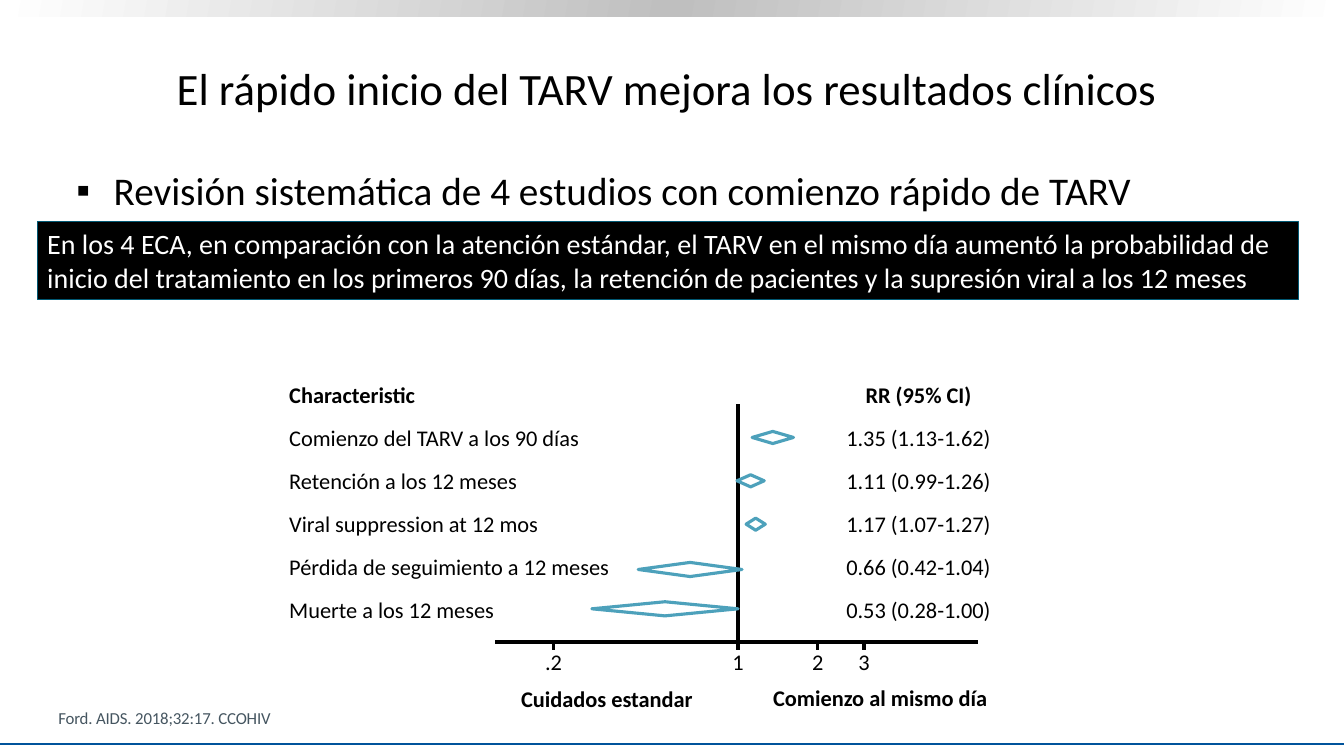
from dataclasses import dataclass
from math import log

from lxml import etree
from pptx import Presentation
from pptx.dml.color import RGBColor
from pptx.enum.shapes import MSO_CONNECTOR, MSO_SHAPE
from pptx.enum.text import MSO_ANCHOR, PP_ALIGN
from pptx.oxml.ns import qn
from pptx.util import Emu, Pt

LEFT, CENTER = PP_ALIGN.LEFT, PP_ALIGN.CENTER
TOP, MIDDLE, BOTTOM = MSO_ANCHOR.TOP, MSO_ANCHOR.MIDDLE, MSO_ANCHOR.BOTTOM
RECTANGLE, DIAMOND = MSO_SHAPE.RECTANGLE, MSO_SHAPE.DIAMOND
STRAIGHT = MSO_CONNECTOR.STRAIGHT

EMU_PER_PX = 9144  # 100 px to the inch
FONT = "Calibri"
COLORS = {
    "black": "000000", "white": "FFFFFF", "silver": "BFBFBF", "footer": "00539B",
    "diamond": "4DA1BB", "banner_line": "015873", "source": "455560",
}

AXIS_Y = 637
NO_EFFECT_X = 732
PX_PER_LOG_UNIT = 114
TICK_LABEL_WIDTH = 60
ROW_GAP = 15.4


@dataclass
class Box:
    left: int
    top: int
    width: int
    height: int


@dataclass
class Line:
    text: str
    size: int = 16
    color: str = "black"
    bold: bool = False


@dataclass
class Outcome:
    label: str
    ratio: float
    low: float
    high: float
    middle: int
    height: int

    @property
    def result(self) -> str:
        return f"{self.ratio:.2f} ({self.low:.2f}-{self.high:.2f})"


@dataclass
class Tick:
    value: float
    label: str


OUTCOMES = [
    Outcome("Comienzo del TARV a los 90 días", 1.35, 1.13, 1.62, 434, 12),
    Outcome("Retención a los 12 meses", 1.11, 0.99, 1.26, 477, 12),
    Outcome("Viral suppression at 12 mos", 1.17, 1.07, 1.27, 520, 12),
    Outcome("Pérdida de seguimiento a 12 meses", 0.66, 0.42, 1.04, 565, 14),
    Outcome("Muerte a los 12 meses", 0.53, 0.28, 1.00, 604, 14),
]
TICKS = [Tick(0.2, ".2"), Tick(1, "1"), Tick(2, "2"), Tick(3, "3")]


def px(value: int) -> Emu:
    return Emu(value * EMU_PER_PX)


def rgb(name: str) -> RGBColor:
    return RGBColor.from_string(COLORS[name])


def ratio_x(ratio: float) -> int:
    """Horizontal place of a risk ratio on the logarithmic axis."""
    return round(NO_EFFECT_X + PX_PER_LOG_UNIT * log(ratio))


def write(shape, lines: list[Line], align=LEFT, anchor=TOP, wrap: bool = True,
          spacing: float = 1.0, gap: float = 0):
    frame = shape.text_frame
    frame.word_wrap = wrap
    frame.vertical_anchor = anchor
    for index, line in enumerate(lines):
        paragraph = frame.add_paragraph() if index else frame.paragraphs[0]
        paragraph.alignment = align
        paragraph.line_spacing = spacing
        if index:
            paragraph.space_before = Pt(gap)
        run = paragraph.add_run()
        run.text = line.text
        run.font.name = FONT
        run.font.size = Pt(line.size)
        run.font.bold = line.bold
        run.font.color.rgb = rgb(line.color)
    return shape


def add_text(slide, box: Box, lines: list[Line], **layout):
    shape = slide.shapes.add_textbox(px(box.left), px(box.top), px(box.width), px(box.height))
    return write(shape, lines, **layout)


def add_box(slide, kind, box: Box, fill: str | None = None, line: str | None = None,
            width: float = 0.75):
    shape = slide.shapes.add_shape(kind, px(box.left), px(box.top), px(box.width), px(box.height))
    shape.shadow.inherit = False
    if fill:
        shape.fill.solid()
        shape.fill.fore_color.rgb = rgb(fill)
    else:
        shape.fill.background()
    if line:
        shape.line.color.rgb = rgb(line)
        shape.line.width = Pt(width)
    else:
        shape.line.fill.background()
    return shape


def add_line(slide, x1: int, y1: int, x2: int, y2: int, color: str = "black",
             width: float = 2.25) -> None:
    connector = slide.shapes.add_connector(STRAIGHT, px(x1), px(y1), px(x2), px(y2))
    connector.line.color.rgb = rgb(color)
    connector.line.width = Pt(width)
    etree.SubElement(connector._element.spPr, qn("a:effectLst"))


def add_frame(slide) -> None:
    """Draw the shaded strip at the top and the rule at the bottom."""
    strip = add_box(slide, RECTANGLE, Box(0, 0, 1333, 16))
    strip.fill.gradient()
    gradient = strip._element.spPr.find(qn("a:gradFill"))
    stops = gradient.find(qn("a:gsLst"))
    for stop in list(stops):
        stops.remove(stop)
    for position, color in ((0, "white"), (50, "silver"), (100, "white")):
        stop = etree.SubElement(stops, qn("a:gs"), pos=str(position * 1000))
        etree.SubElement(stop, qn("a:srgbClr"), val=COLORS[color])
    direction = gradient.find(qn("a:lin"))
    direction.set("ang", str(190 * 60000))
    direction.set("scaled", "0")
    add_line(slide, 0, 738, 1333, 738, "footer", 1.5)


def add_bullet(paragraph, indent: int) -> None:
    properties = paragraph._p.get_or_add_pPr()
    properties.set("marL", str(px(indent)))
    properties.set("indent", str(px(-indent)))
    color = etree.SubElement(properties, qn("a:buClr"))
    etree.SubElement(color, qn("a:srgbClr"), val=COLORS["black"])
    etree.SubElement(properties, qn("a:buFont"), typeface="Arial")
    etree.SubElement(properties, qn("a:buChar"), char="▪")


def add_headings(slide) -> None:
    add_text(slide, Box(67, 26, 1189, 121),
             [Line("El rápido inicio del TARV mejora los resultados clínicos", 32)],
             align=CENTER, anchor=MIDDLE)
    review = add_text(slide, Box(66, 165, 1190, 59),
                      [Line("Revisión sistemática de 4 estudios con comienzo rápido de TARV", 28)],
                      spacing=0.9)
    add_bullet(review.text_frame.paragraphs[0], 37)
    banner = add_box(slide, RECTANGLE, Box(37, 220, 1251, 77), "black", "banner_line")
    write(banner, [Line(
        "En los 4 ECA, en comparación con la atención estándar, el TARV en el mismo día "
        "aumentó la probabilidad de inicio del tratamiento en los primeros 90 días, la "
        "retención de pacientes y la supresión viral a los 12 meses", 20, "white")])


def add_forest_plot(slide) -> None:
    labels = [Line("Characteristic", bold=True)] + [Line(o.label) for o in OUTCOMES]
    results = [Line("RR (95% CI)", bold=True)] + [Line(o.result) for o in OUTCOMES]
    add_text(slide, Box(277, 378, 358, 247), labels, spacing=0.8, gap=ROW_GAP)
    add_text(slide, Box(821, 378, 180, 247), results, align=CENTER, spacing=0.8, gap=ROW_GAP)

    add_line(slide, NO_EFFECT_X, 401, NO_EFFECT_X, AXIS_Y)
    add_line(slide, 491, AXIS_Y, 970, AXIS_Y)
    for tick in TICKS:
        x = ratio_x(tick.value)
        add_line(slide, x, AXIS_Y, x, AXIS_Y + 8)
        add_text(slide, Box(x - TICK_LABEL_WIDTH // 2, AXIS_Y + 1, TICK_LABEL_WIDTH, 37),
                 [Line(tick.label)], align=CENTER, wrap=False)
    for outcome in OUTCOMES:
        left, right = ratio_x(outcome.low), ratio_x(outcome.high)
        top = outcome.middle - outcome.height // 2
        add_box(slide, DIAMOND, Box(left, top, right - left, outcome.height),
                line="diamond", width=2.25)

    add_text(slide, Box(478, 675, 248, 37), [Line("Cuidados estandar", bold=True)], align=CENTER)
    add_text(slide, Box(729, 674, 288, 37), [Line("Comienzo al mismo día", bold=True)],
             align=CENTER)


def add_source(slide) -> None:
    source = add_text(slide, Box(48, 697, 276, 30),
                      [Line("Ford. AIDS. 2018;32:17. CCOHIV", 12, "source")], anchor=BOTTOM)
    source.text_frame.paragraphs[0].runs[0]._r.get_or_add_rPr().set("spc", "-10")


def main() -> None:
    presentation = Presentation()
    presentation.slide_width, presentation.slide_height = px(1333), px(750)
    slide = presentation.slides.add_slide(presentation.slide_layouts[6])
    add_frame(slide)
    add_headings(slide)
    add_forest_plot(slide)
    add_source(slide)
    presentation.save("out.pptx")


if __name__ == "__main__":
    main()
